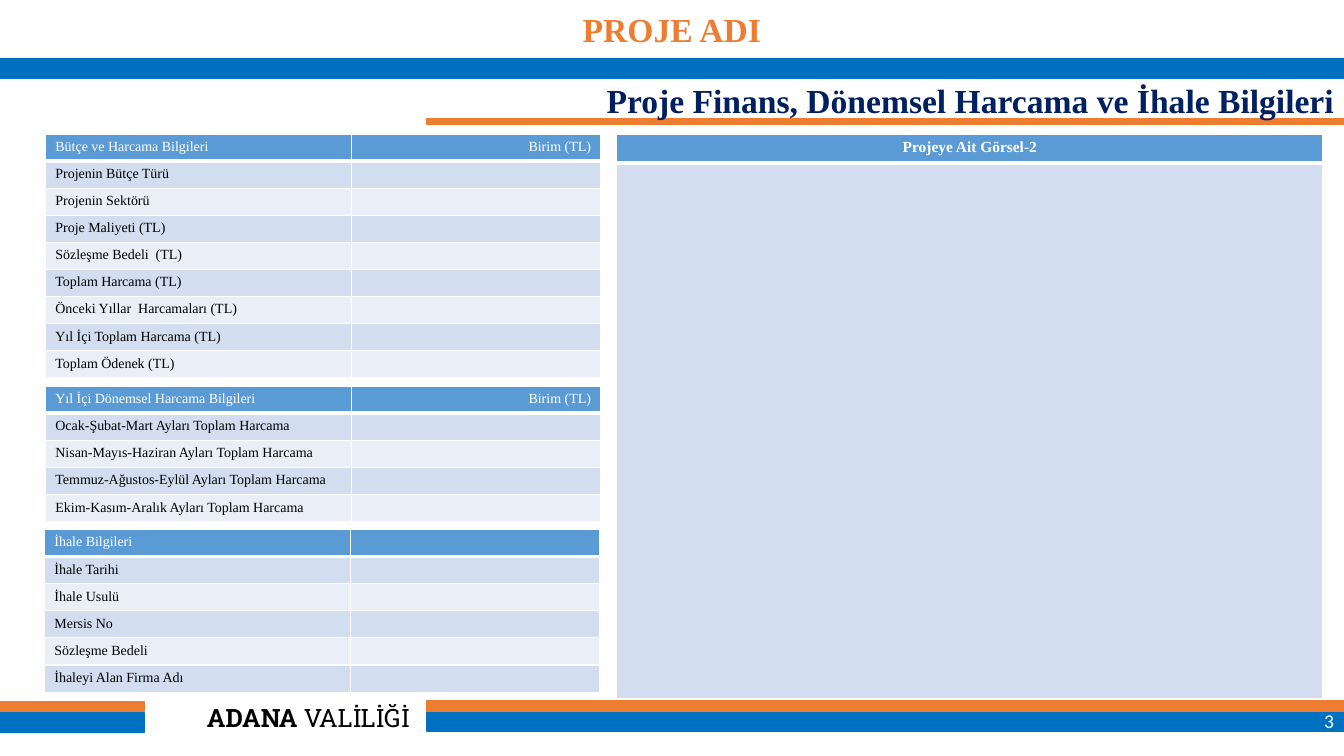
from dataclasses import dataclass

from lxml.etree import SubElement
from pptx import Presentation
from pptx.dml.color import RGBColor
from pptx.enum.shapes import MSO_SHAPE as Preset
from pptx.enum.text import MSO_ANCHOR as Anchor, MSO_AUTO_SIZE as AutoSize, PP_ALIGN as Align
from pptx.oxml.ns import qn
from pptx.util import Pt

COLORS = {
    "blue": "0070C0",
    "orange": "ED7D31",
    "navy": "002060",
    "header": "5B9BD5",
    "band_dark": "D2DEEF",
    "band_light": "EAEFF7",
    "white": "FFFFFF",
    "black": "000000",
}
SERIF = "Times New Roman"
ROW_HEIGHT = 19.2
INFO_COLUMNS = (218.7, 178.2)


@dataclass
class Area:
    left: float
    top: float
    width: float
    height: float

    def lengths(self) -> tuple:
        return Pt(self.left), Pt(self.top), Pt(self.width), Pt(self.height)


@dataclass
class Style:
    size: float
    color: str
    font: str = SERIF
    bold: bool = False
    align: Align = Align.LEFT


@dataclass
class Bar:
    area: Area
    color: str


@dataclass
class Grid:
    left: float
    top: float
    columns: tuple
    heights: list
    rows: list
    header: Style
    header_align: tuple


def rgb(name: str) -> RGBColor:
    return RGBColor.from_string(COLORS[name])


def add_span(para, text: str, style: Style) -> None:
    para.alignment = style.align
    span = para.add_run()
    span.text = text
    span.font.name = style.font
    span.font.size = Pt(style.size)
    span.font.bold = style.bold
    span.font.color.rgb = rgb(style.color)


def draw_bar(page, bar: Bar):
    box = page.shapes.add_shape(Preset.RECTANGLE, *bar.area.lengths())
    box.shadow.inherit = False
    box.fill.solid()
    box.fill.fore_color.rgb = rgb(bar.color)
    box.line.color.rgb = rgb(bar.color)
    box.line.width = Pt(1)
    return box


def write_box(box, text: str, style: Style, anchor: Anchor = Anchor.TOP) -> None:
    frame = box.text_frame
    frame.word_wrap = True
    frame.auto_size = AutoSize.NONE
    frame.vertical_anchor = anchor
    add_span(frame.paragraphs[0], text, style)


def draw_text(page, area: Area, text: str, style: Style, anchor: Anchor = Anchor.TOP) -> None:
    write_box(page.shapes.add_textbox(*area.lengths()), text, style, anchor)


def set_borders(cell, top: float, bottom: float) -> None:
    properties = cell._tc.get_or_add_tcPr()
    for side, width in (("L", 1), ("R", 1), ("T", top), ("B", bottom)):
        line = SubElement(properties, qn(f"a:ln{side}"), w=str(Pt(width)))
        fill = SubElement(line, qn("a:solidFill"))
        SubElement(fill, qn("a:srgbClr"), val=COLORS["white"])


def draw_grid(page, grid: Grid) -> None:
    area = Area(grid.left, grid.top, sum(grid.columns), sum(grid.heights))
    table = page.shapes.add_table(len(grid.rows), len(grid.columns), *area.lengths()).table
    for column, width in zip(table.columns, grid.columns):
        column.width = Pt(width)
    for index, (row, height, texts) in enumerate(zip(table.rows, grid.heights, grid.rows)):
        row.height = Pt(height)
        is_header = index == 0
        band = "header" if is_header else "band_dark" if index % 2 else "band_light"
        for cell, text, align in zip(row.cells, texts, grid.header_align):
            set_borders(cell, 3 if index == 1 else 1, 3 if is_header else 1)
            cell.fill.solid()
            cell.fill.fore_color.rgb = rgb(band)
            para = cell.text_frame.paragraphs[0]
            if not text:
                SubElement(para._p, qn("a:endParaRPr"), sz="1000")
            elif is_header:
                head = grid.header
                add_span(para, text, Style(head.size, head.color, bold=head.bold, align=align))
            else:
                add_span(para, text, Style(10, "black"))


def info_grid(left: float, top: float, header: tuple, labels: list) -> Grid:
    rows = [header] + [(label, "") for label in labels]
    return Grid(left, top, INFO_COLUMNS, [ROW_HEIGHT] * len(rows), rows,
                Style(10, "white"), (Align.LEFT, Align.RIGHT))


FOOTER_BLUE = Bar(Area(304.6, 509, 655.4, 13.3), "blue")
FOOTER_NAME = Bar(Area(128.2, 501.8, 183.6, 21.6), "white")
BARS = [
    Bar(Area(0, 509, 103, 14.4), "blue"),
    Bar(Area(0, 501.1, 103, 7.2), "orange"),
    Bar(Area(304.6, 500.4, 655.4, 7.9), "orange"),
    Bar(Area(0, 42.2, 960, 13.7), "blue"),
    Bar(Area(304.6, 85, 655.4, 3.6), "orange"),
]
GRIDS = [
    info_grid(32.4, 95.8, ("Bütçe ve Harcama Bilgileri", "Birim (TL)"), [
        "Projenin Bütçe Türü",
        "Projenin Sektörü",
        "Proje Maliyeti (TL)",
        "Sözleşme Bedeli  (TL)",
        "Toplam Harcama (TL)",
        "Önceki Yıllar  Harcamaları (TL)",
        "Yıl İçi Toplam Harcama (TL)",
        "Toplam Ödenek (TL)",
    ]),
    info_grid(32.4, 276, ("Yıl İçi Dönemsel Harcama Bilgileri", "Birim (TL)"), [
        "Ocak-Şubat-Mart Ayları Toplam Harcama",
        "Nisan-Mayıs-Haziran Ayları Toplam Harcama",
        "Temmuz-Ağustos-Eylül Ayları Toplam Harcama",
        "Ekim-Kasım-Aralık Ayları Toplam Harcama",
    ]),
    Grid(440.6, 95.8, (504.4,), [20.6, 382.4], [("Projeye Ait Görsel-2",), ("",)],
         Style(11, "white", bold=True), (Align.CENTER,)),
    info_grid(31.7, 378.2, ("İhale Bilgileri", ""), [
        "İhale Tarihi",
        "İhale Usulü",
        "Mersis No",
        "Sözleşme Bedeli",
        "İhaleyi Alan Firma Adı",
    ]),
]


def main() -> None:
    deck = Presentation()
    deck.slide_width, deck.slide_height = Pt(960), Pt(540)
    page = deck.slides.add_slide(deck.slide_layouts[5])

    name_box = draw_bar(page, FOOTER_NAME)
    name_box.line.fill.background()
    for text, bold in (("ADANA", True), (" VALİLİĞİ", False)):
        write_box(name_box, text, Style(18, "black", "Roboto Slab", bold, Align.CENTER),
                  Anchor.MIDDLE)
    for bar in [FOOTER_BLUE] + BARS:
        draw_bar(page, bar)

    draw_text(page, Area(744.5, 500.4, 215.5, 28.8), "3",
              Style(14, "white", "Calibri", align=Align.RIGHT), Anchor.MIDDLE)
    title = page.shapes.title
    title.left, title.top, title.width, title.height = Area(3.6, 2.9, 952.6, 36.3).lengths()
    write_box(title, "PROJE ADI", Style(24, "orange", bold=True, align=Align.CENTER))
    draw_text(page, Area(304.6, 53.3, 655.4, 36.3),
              "Proje Finans, Dönemsel Harcama ve İhale Bilgileri",
              Style(24, "navy", bold=True, align=Align.RIGHT))
    for grid in GRIDS:
        draw_grid(page, grid)

    deck.save("out.pptx")


if __name__ == "__main__":
    main()
